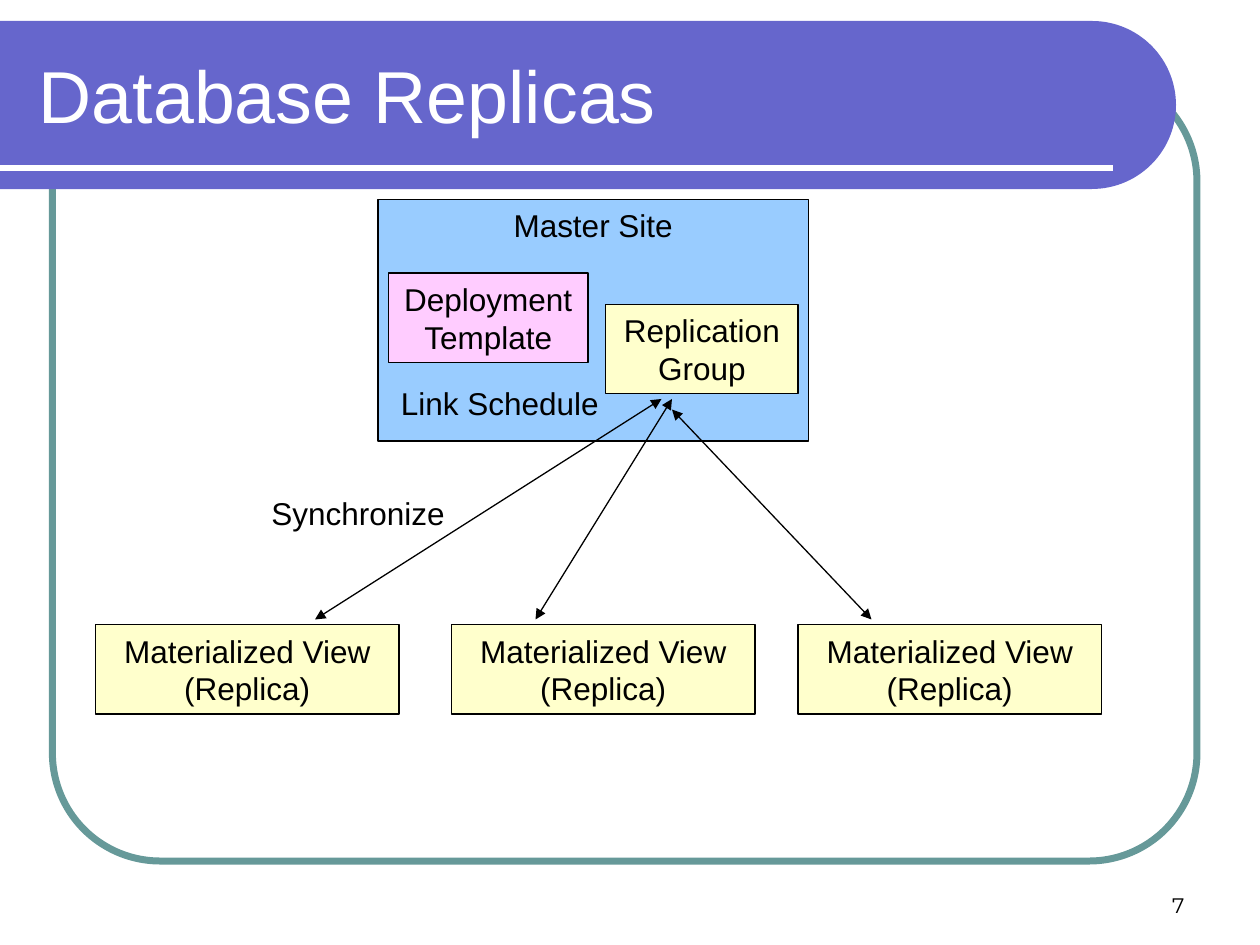
import math
from lxml import etree
from pptx import Presentation
from pptx import util as u
from pptx.dml.color import RGBColor
from pptx.enum import shapes, text
from pptx.oxml.ns import qn

PX = 7620  # 120 px to the inch
BLACK, WHITE, CREAM = "000000", "FFFFFF", "FFFFCC"
MID, TOP, LOW = text.MSO_ANCHOR.MIDDLE, text.MSO_ANCHOR.TOP, text.MSO_ANCHOR.BOTTOM
LEFT, CENTER, RIGHT = text.PP_ALIGN.LEFT, text.PP_ALIGN.CENTER, text.PP_ALIGN.RIGHT


def emu(*vals):
    return [u.Emu(round(v * PX)) for v in vals]


def rgb(code):
    return RGBColor.from_string(code)


def paint(shape, fill, line=None, width=0.75):
    """Set fill and line; None leaves that part empty."""
    shape.shadow.inherit = False
    if fill:
        shape.fill.solid()
        shape.fill.fore_color.rgb = rgb(fill)
    else:
        shape.fill.background()
    if line:
        shape.line.color.rgb = rgb(line)
        shape.line.width = u.Pt(width)
    else:
        shape.line.fill.background()


def write(shape, words, size=18, color=BLACK, align=CENTER, anchor=MID,
          font="Arial", wrap=True):
    frame = shape.text_frame
    frame.auto_size = text.MSO_AUTO_SIZE.NONE
    frame.word_wrap = wrap
    frame.vertical_anchor = anchor
    para = frame.paragraphs[0]
    para.alignment = align
    run = para.add_run()
    run.text = words
    run.font.size = u.Pt(size)
    run.font.name = font
    run.font.color.rgb = rgb(color)


def box(slide, area, words, fill, anchor=MID):
    shape = slide.shapes.add_shape(shapes.MSO_SHAPE.RECTANGLE, *emu(*area))
    paint(shape, fill, BLACK)
    write(shape, words, anchor=anchor)


def label(slide, area, words, **style):
    write(slide.shapes.add_textbox(*emu(*area)), words, **style)


def line(slide, start, end, color, width, arrows=False):
    link = slide.shapes.add_connector(
        shapes.MSO_CONNECTOR.STRAIGHT, *emu(*start, *end))
    link.line.color.rgb = rgb(color)
    link.line.width = u.Pt(width)
    props = link._element.spPr
    if arrows:
        for tag in ("a:headEnd", "a:tailEnd"):
            etree.SubElement(props.find(qn("a:ln")), qn(tag), type="triangle")
    etree.SubElement(props, qn("a:effectLst"))


def frame(slide, area):
    shape = slide.shapes.add_shape(
        shapes.MSO_SHAPE.ROUNDED_RECTANGLE, *emu(*area))
    shape.adjustments[0] = 0.137
    paint(shape, None, "669999", 4)


def banner(slide, area, words):
    """Draw a bar with a round right end, its rule and the title."""
    x, y, w, h = area
    rad = h / 2
    mid = x + w - rad
    arc = [(mid + rad * math.cos(math.radians(a)),
            y + rad + rad * math.sin(math.radians(a)))
           for a in range(-90, 91, 3)]
    path = slide.shapes.build_freeform(*emu(x, y), scale=1.0)
    path.add_line_segments([emu(*p) for p in arc + [(x, y + h)]], close=True)
    paint(path.convert_to_shape(), "6666CC")
    line(slide, (x, y + 140), (x + 1060, y + 140), WHITE, 3)

    title = slide.shapes.title
    title.left, title.top, title.width, title.height = emu(x + 25, y + 10, 1052, 120)
    write(title, words, 42, WHITE, LEFT)
    slide.shapes._spTree.append(title._element)  # in front of the bar


def master(slide, area):
    x, y, w, h = area
    box(slide, area, "Master Site", "99CCFF", TOP)
    box(slide, (x + 217, y + 100, 183, 85), "Replication Group", CREAM)
    box(slide, (x + 10, y + 70, 190, 85), "Deployment Template", "FFCCFF")


def views(slide, area):
    x, y, w, h = area
    for step in (0, 339, 669):
        box(slide, (x + step, y, w, h), "Materialized View (Replica)", CREAM)


def links(slide):
    for start, end in (((630, 380), (300, 590)),
                       ((640, 380), (510, 590)),
                       ((640, 390), (830, 590))):
        line(slide, start, end, BLACK, 0.75, arrows=True)
    label(slide, (370, 360, 212, 48), "Link Schedule",
          align=LEFT, anchor=TOP, wrap=False)
    label(slide, (246, 465, 190, 48), "Synchronize", anchor=TOP, wrap=False)


def main():
    deck = Presentation()
    deck.slide_width, deck.slide_height = emu(1200, 900)
    slide = deck.slides.add_slide(deck.slide_layouts[5])
    frame(slide, (50, 70, 1090, 750))
    banner(slide, (0, 20, 1120, 160), "Database Replicas")
    label(slide, (860, 820, 280, 60), "7", size=12, align=RIGHT,
          anchor=LOW, font="Montserrat")
    master(slide, (360, 190, 410, 230))
    views(slide, (91, 595, 289, 85))
    links(slide)
    deck.save("out.pptx")


if __name__ == "__main__":
    main()
